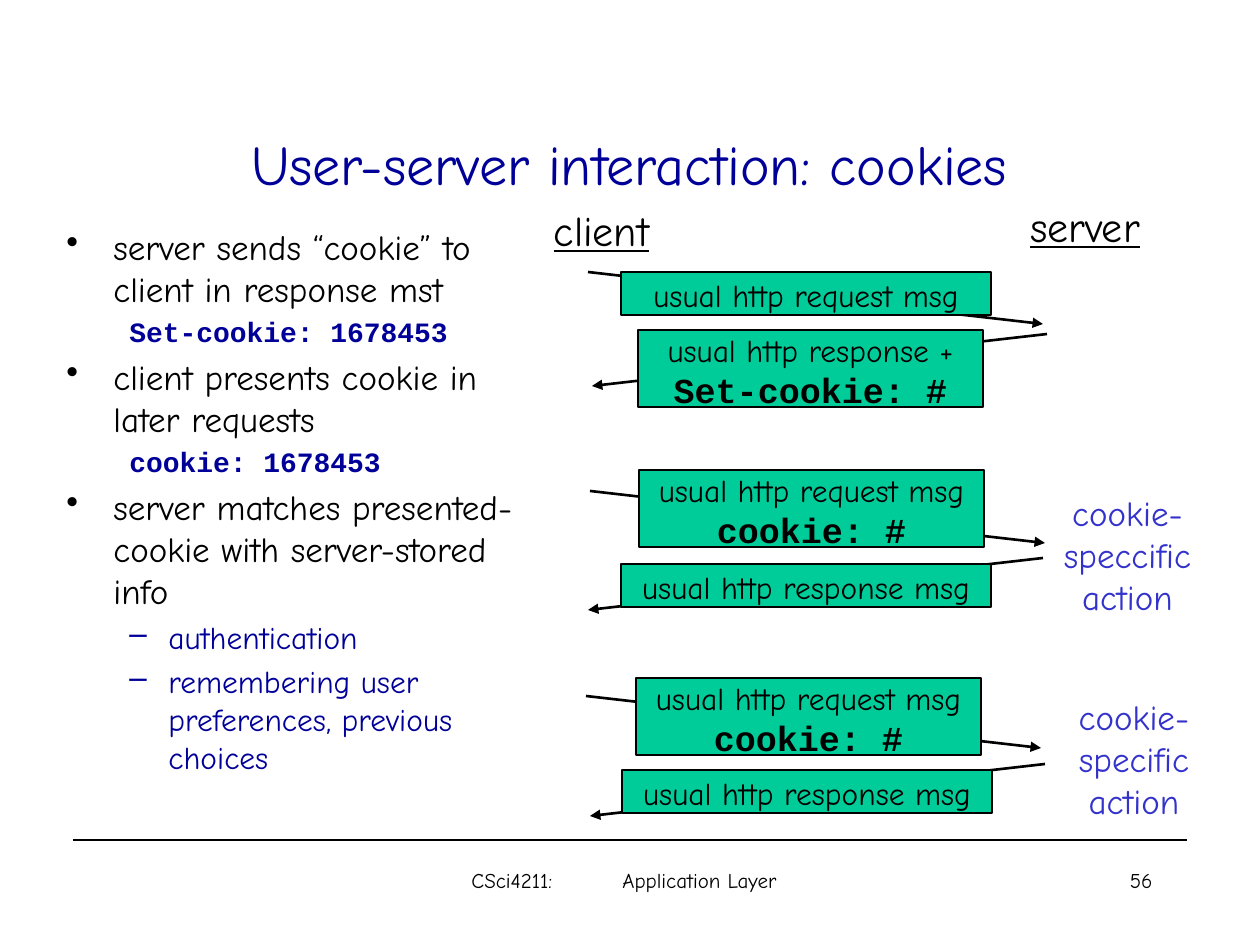
import pptx
import pptx.util
import pptx.dml.color
import pptx.enum.shapes
import pptx.enum.text
import pptx.oxml.ns
import lxml.etree

EMU_PER_PX = 914400 / 126
COLORS = {"black": "000000", "navy": "000099", "action": "3333CC", "message": "00CC99"}
SANS, MONO = "Comic Neue", "Courier New"
ALIGN = pptx.enum.text.PP_ALIGN
qn = pptx.oxml.ns.qn

deck = pptx.Presentation()
deck.slide_width, deck.slide_height = pptx.util.Inches(10), pptx.util.Inches(7.5)
page = deck.slides.add_slide(deck.slide_layouts[6])


def px(*lengths):
    return [round(length * EMU_PER_PX) for length in lengths]


def write(box, lines, align, wrap=True):
    frame = box.text_frame
    frame.word_wrap = wrap
    for index, (text, size, face, color) in enumerate(lines):
        para = frame.paragraphs[0] if index == 0 else frame.add_paragraph()
        para.text = text
        para.alignment = align
        para.font.size = pptx.util.Pt(size)
        para.font.name = face
        para.font.bold = face == MONO
        para.font.color.rgb = pptx.dml.color.RGBColor.from_string(COLORS[color])
    return frame


arrows = [
    (588, 272, 1043, 324), (1047, 334, 592, 386),
    (590, 491, 1045, 543), (1043, 558, 588, 610),
    (586, 696, 1041, 748), (1045, 764, 590, 816),
]
for index, ends in enumerate([(73, 840, 1187, 840)] + arrows):
    line = page.shapes.add_connector(pptx.enum.shapes.MSO_CONNECTOR.STRAIGHT, *px(*ends))
    line.line.color.rgb = pptx.dml.color.RGBColor.from_string(COLORS["black"])
    line.line.width = pptx.util.Pt(1.5 if index else 0.75)
    if index:
        lxml.etree.SubElement(line.line._get_or_add_ln(), qn("a:tailEnd"), type="triangle")
    lxml.etree.SubElement(line._element.spPr, qn("a:effectLst"))

labels = [
    ((459, 861, 130, 63), "CSci4211:", 12, "black", ALIGN.LEFT),
    ((610, 861, 200, 63), "Application Layer", 12, "black", ALIGN.LEFT),
    ((903, 861, 262, 63), "56", 12, "black", ALIGN.RIGHT),
    ((94, 84, 1071, 158), "User-server interaction: cookies", 32, "navy", ALIGN.CENTER),
    ((534, 198, 135, 63), "client", 24, "black", ALIGN.CENTER),
    ((1009, 194, 152, 63), "server", 24, "black", ALIGN.CENTER),
    ((1042, 485, 171, 139), "cookie-\nspeccific\naction", 20, "action", ALIGN.CENTER),
    ((1057, 689, 154, 139), "cookie-\nspecific\naction", 20, "action", ALIGN.CENTER),
]
for place, text, size, color, align in labels:
    box = page.shapes.add_textbox(*px(*place))
    lines = [(part, size, SANS, color) for part in text.split("\n")]
    frame = write(box, lines, align, wrap=size not in (20, 24))
    if size == 32:
        frame.vertical_anchor = pptx.enum.text.MSO_ANCHOR.MIDDLE
    if size == 24:
        frame.paragraphs[0].font.underline = True

points = [
    ("•", "server sends “cookie” to client in response mst", 20, SANS, "black"),
    ("", "Set-cookie: 1678453", 16, MONO, "navy"),
    ("•", "client presents cookie in later requests", 20, SANS, "black"),
    ("", "cookie: 1678453", 16, MONO, "navy"),
    ("•", "server matches presented-cookie with server-stored info", 20, SANS, "black"),
    ("–", "authentication", 18, SANS, "navy"),
    ("–", "remembering user preferences, previous choices", 18, SANS, "navy"),
]
body = page.shapes.add_textbox(*px(54, 219, 496, 593))
frame = write(body, [point[1:] for point in points], ALIGN.LEFT)
for para, (bullet, text, size, face, color) in zip(frame.paragraphs, points):
    para.space_before = pptx.util.Pt(size * 0.2)
    para.level = 0 if bullet == "•" else 1
    margin, hang = px(47, 47) if bullet == "•" else px(102, 39)
    settings = para._p.get_or_add_pPr()
    settings.set("marL", str(margin))
    settings.set("indent", str(-hang))
    if bullet:
        lxml.etree.SubElement(settings, qn("a:buChar"), char=bullet)
        settings.append(settings.find(qn("a:defRPr")))

messages = [
    (621, 272, 370, "usual http request msg", ""),
    (638, 330, 345, "usual http response +", "Set-cookie: #"),
    (639, 470, 345, "usual http request msg", "cookie: #"),
    (621, 564, 370, "usual http response msg", ""),
    (636, 678, 345, "usual http request msg", "cookie: #"),
    (622, 770, 370, "usual http response msg", ""),
]
for left, top, width, text, header in messages:
    box = page.shapes.add_shape(
        pptx.enum.shapes.MSO_SHAPE.RECTANGLE, *px(left, top, width, 77 if header else 43))
    box.shadow.inherit = False
    box.fill.solid()
    box.fill.fore_color.rgb = pptx.dml.color.RGBColor.from_string(COLORS["message"])
    box.line.color.rgb = pptx.dml.color.RGBColor.from_string(COLORS["black"])
    box.line.width = pptx.util.Pt(0.75)
    lines = [(text, 18, SANS, "black")]
    if header:
        lines.append((header, 20, MONO, "black"))
    frame = write(box, lines, ALIGN.CENTER)
    frame.vertical_anchor = pptx.enum.text.MSO_ANCHOR.TOP
    frame.margin_left = frame.margin_right = frame.margin_bottom = 0
    frame.margin_top = px(1 if header else 4)[0]

deck.save("out.pptx")
